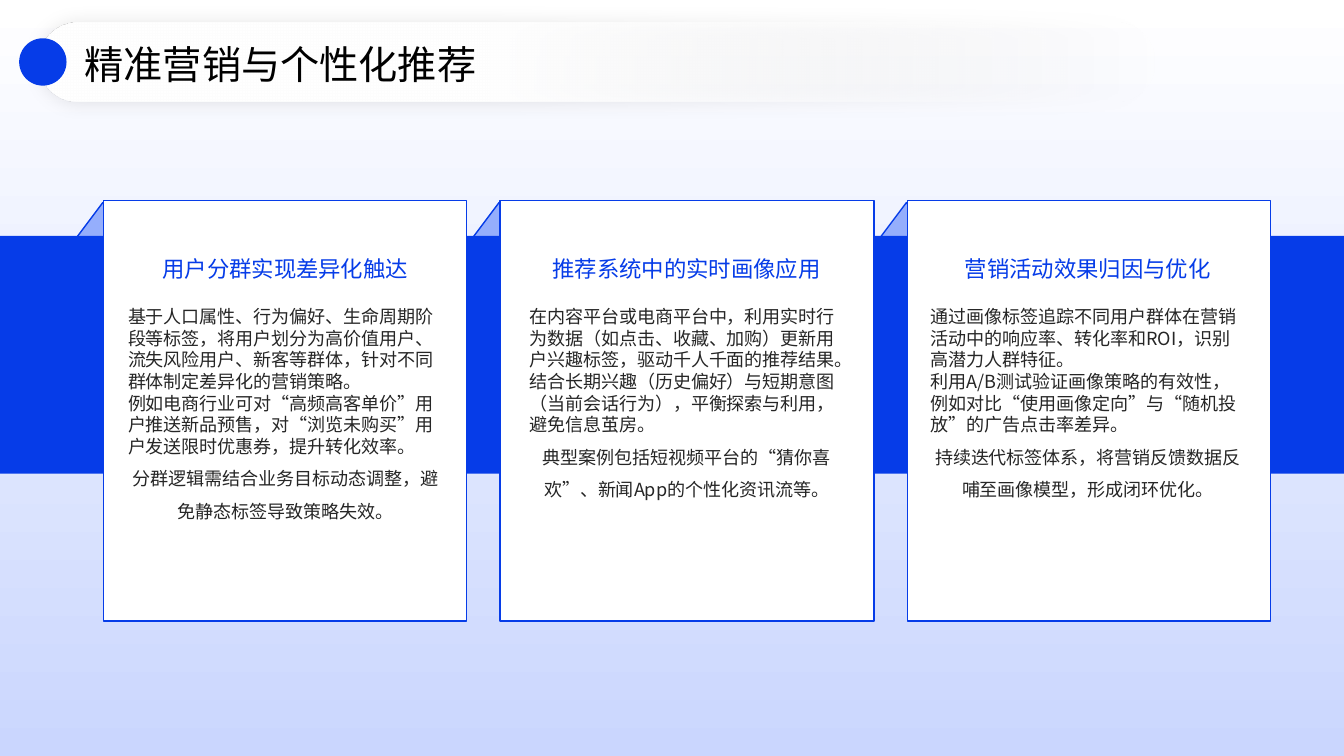
from lxml import etree
from pptx import Presentation
from pptx.dml.color import RGBColor
from pptx.enum.shapes import MSO_SHAPE
from pptx.enum.text import MSO_ANCHOR, PP_ALIGN
from pptx.oxml.ns import qn
from pptx.util import Inches, Pt

RECTANGLE = MSO_SHAPE.RECTANGLE
TRIANGLE = MSO_SHAPE.ISOSCELES_TRIANGLE
PILL = MSO_SHAPE.ROUNDED_RECTANGLE
OVAL = MSO_SHAPE.OVAL
LEFT, CENTER = PP_ALIGN.LEFT, PP_ALIGN.CENTER
TOP, MIDDLE = MSO_ANCHOR.TOP, MSO_ANCHOR.MIDDLE

FONT = "Noto Sans CJK SC"
BLUE, LIGHT_BLUE, PALE_BLUE = "063CE8", "95AEFC", "CAD6FE"
WHITE, BLACK, DARK = "FFFFFF", "000000", "262626"

TITLE = "精准营销与个性化推荐"
CARDS = [
    {
        "left": 1.03, "width": 3.6,
        "heading": "用户分群实现差异化触达",
        "body": [
            "基于人口属性、行为偏好、生命周期阶段等标签，将用户划分为高价值用户、流失风险用户、新客等群体，针对不同群体制定差异化的营销策略。",
            "例如电商行业可对“高频高客单价”用户推送新品预售，对“浏览未购买”用户发送限时优惠券，提升转化效率。",
            "分群逻辑需结合业务目标动态调整，避免静态标签导致策略失效。",
        ],
    },
    {
        "left": 4.96, "width": 3.71,
        "heading": "推荐系统中的实时画像应用",
        "body": [
            "在内容平台或电商平台中，利用实时行为数据（如点击、收藏、加购）更新用户兴趣标签，驱动千人千面的推荐结果。",
            "结合长期兴趣（历史偏好）与短期意图（当前会话行为），平衡探索与利用，避免信息茧房。",
            "典型案例包括短视频平台的“猜你喜欢”、新闻App的个性化资讯流等。",
        ],
    },
    {
        "left": 9, "width": 3.6,
        "heading": "营销活动效果归因与优化",
        "body": [
            "通过画像标签追踪不同用户群体在营销活动中的响应率、转化率和ROI，识别高潜力人群特征。",
            "利用A/B测试验证画像策略的有效性，例如对比“使用画像定向”与“随机投放”的广告点击率差异。",
            "持续迭代标签体系，将营销反馈数据反哺至画像模型，形成闭环优化。",
        ],
    },
]
TEXT_LEFT, TEXT_STEP, TEXT_WIDTH = 1.27, 3.98, 3.12

ARROW_AXIS = 0.615
ARROW_UPPER_HALF = [
    (0.29, 0.6), (0.48, 0.6), (0.45, 0.58), (0.43, 0.55), (0.42, 0.51),
    (0.41, 0.48), (0.44, 0.48), (0.45, 0.52), (0.47, 0.56), (0.5, 0.58),
    (0.53, 0.6), (0.57, 0.6),
]

deck = Presentation()
deck.slide_width, deck.slide_height = Inches(13.33), Inches(7.5)
page = deck.slides.add_slide(deck.slide_layouts[6])


def color(value):
    return RGBColor.from_string(value)


def paint(shape, fill=None, line=None):
    shape.shadow.inherit = False
    if fill:
        shape.fill.solid()
        shape.fill.fore_color.rgb = color(fill)
    if line:
        shape.line.color.rgb = color(line)
        shape.line.width = Pt(1)
    else:
        shape.line.fill.background()


def add_shape(kind, left, top, width, height, fill=None, line=None):
    shape = page.shapes.add_shape(
        kind, Inches(left), Inches(top), Inches(width), Inches(height))
    paint(shape, fill, line)
    return shape


def add_gradient(shape, angle, stops):
    shape.fill.gradient()
    shape.fill.gradient_angle = angle
    for stop, (position, value) in zip(shape.fill.gradient_stops, stops):
        stop.position = position
        stop.color.rgb = color(value)


def add_alpha(element, percent):
    etree.SubElement(element, qn("a:alpha"), val=str(percent * 1000))


def add_text(paragraphs, left, top, width, height, size=12.9, fill=DARK,
             anchor=TOP, formats=((LEFT, 1),)):
    box = page.shapes.add_textbox(
        Inches(left), Inches(top), Inches(width), Inches(height))
    frame = box.text_frame
    frame.word_wrap = True
    frame.vertical_anchor = anchor
    frame.margin_left = frame.margin_right = 0
    frame.margin_top = frame.margin_bottom = 0
    for index, (text, (align, spacing)) in enumerate(zip(paragraphs, formats)):
        para = frame.add_paragraph() if index else frame.paragraphs[0]
        para.alignment = align
        para.line_spacing = spacing
        span = para.add_run()
        span.text = text
        span.font.size = Pt(size)
        span.font.name = FONT
        span.font.color.rgb = color(fill)
        etree.SubElement(span.font._element, qn("a:ea"), typeface=FONT)


backdrop = add_shape(RECTANGLE, 0, 0, 13.33, 7.5)
add_gradient(backdrop, 270, [(0, WHITE), (1, PALE_BLUE)])

for card in CARDS:
    add_shape(TRIANGLE, card["left"] - 0.31, 2.01, 0.6, 0.4, LIGHT_BLUE, BLUE)
add_shape(RECTANGLE, 0, 2.34, 13.33, 2.36, BLUE)

for index, card in enumerate(CARDS):
    text_left = TEXT_LEFT + index * TEXT_STEP
    add_shape(RECTANGLE, card["left"], 1.99, card["width"], 4.17, WHITE, BLUE)
    add_text(card["body"], text_left, 3.03, TEXT_WIDTH, 2.95,
             formats=[(LEFT, 1), (LEFT, 1), (CENTER, 1.5)])
    add_text([card["heading"]], text_left, 2.24, TEXT_WIDTH, 0.77, size=16,
             fill=BLUE, anchor=MIDDLE, formats=[(CENTER, 1.3)])

title_bar = add_shape(PILL, 0.38, 0.22, 11.08, 0.79)
title_bar.adjustments[0] = 0.5
add_gradient(title_bar, 180, [(0, WHITE), (0.6, WHITE)])
properties = title_bar._element.spPr
add_alpha(properties.find(".//" + qn("a:gs")).find(qn("a:srgbClr")), 0)
shadow = etree.SubElement(
    properties.find(qn("a:effectLst")), qn("a:outerShdw"),
    blurRad=str(Pt(13)), dist="0", dir="0", algn="ctr", rotWithShape="0")
add_alpha(etree.SubElement(shadow, qn("a:srgbClr"), val=BLACK), 10)

add_text([TITLE], 0.84, 0.38, 10.02, 0.47, size=28, fill=BLACK,
         anchor=MIDDLE, formats=[(LEFT, 1.1)])

add_shape(OVAL, 0.19, 0.38, 0.47, 0.47, BLUE)
lower_half = [(x, 2 * ARROW_AXIS - y) for x, y in reversed(ARROW_UPPER_HALF)]
outline = ARROW_UPPER_HALF + lower_half
builder = page.shapes.build_freeform(*outline[0], scale=Inches(1))
builder.add_line_segments(outline[1:], close=True)
paint(builder.convert_to_shape(), WHITE)

deck.save("out.pptx")
